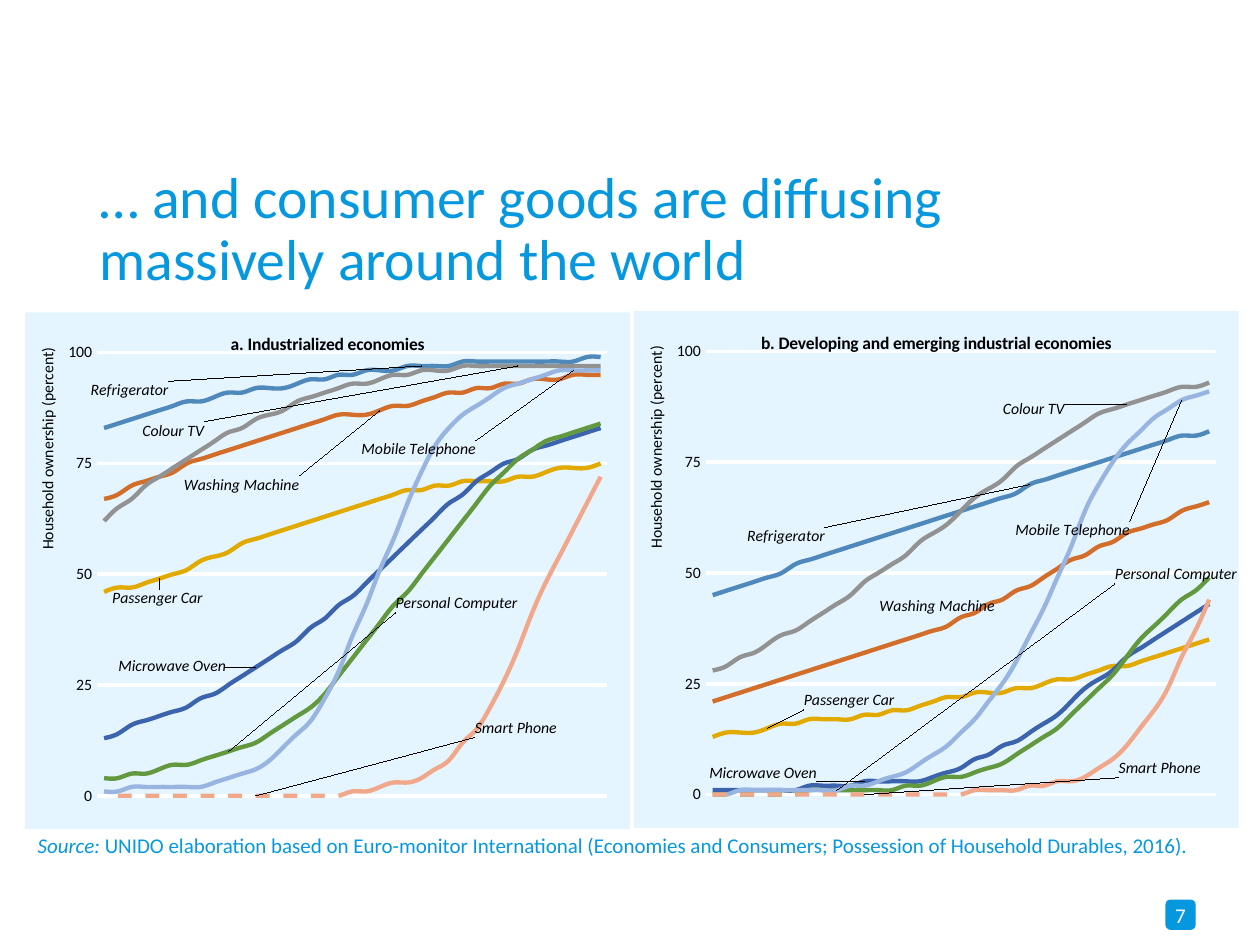
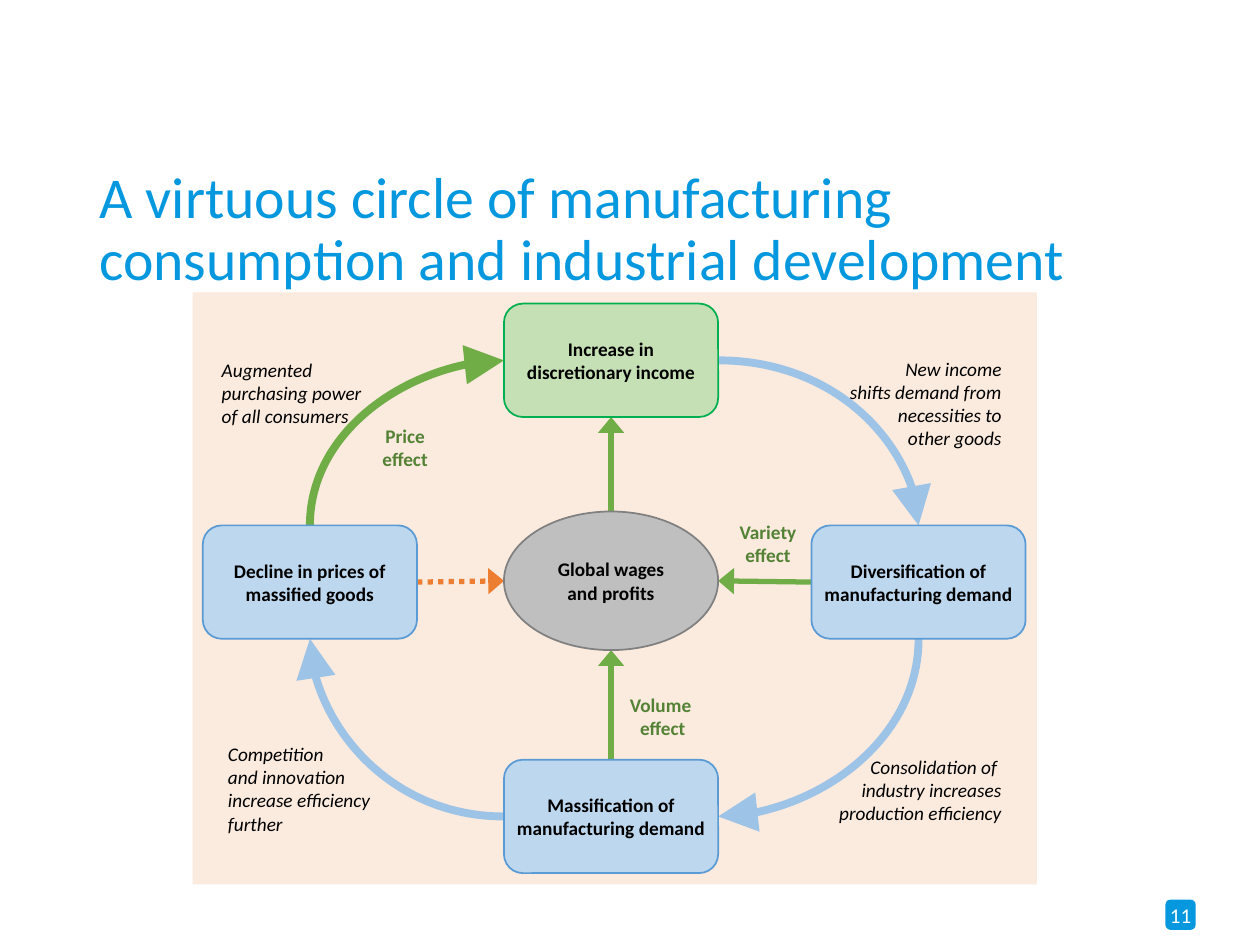
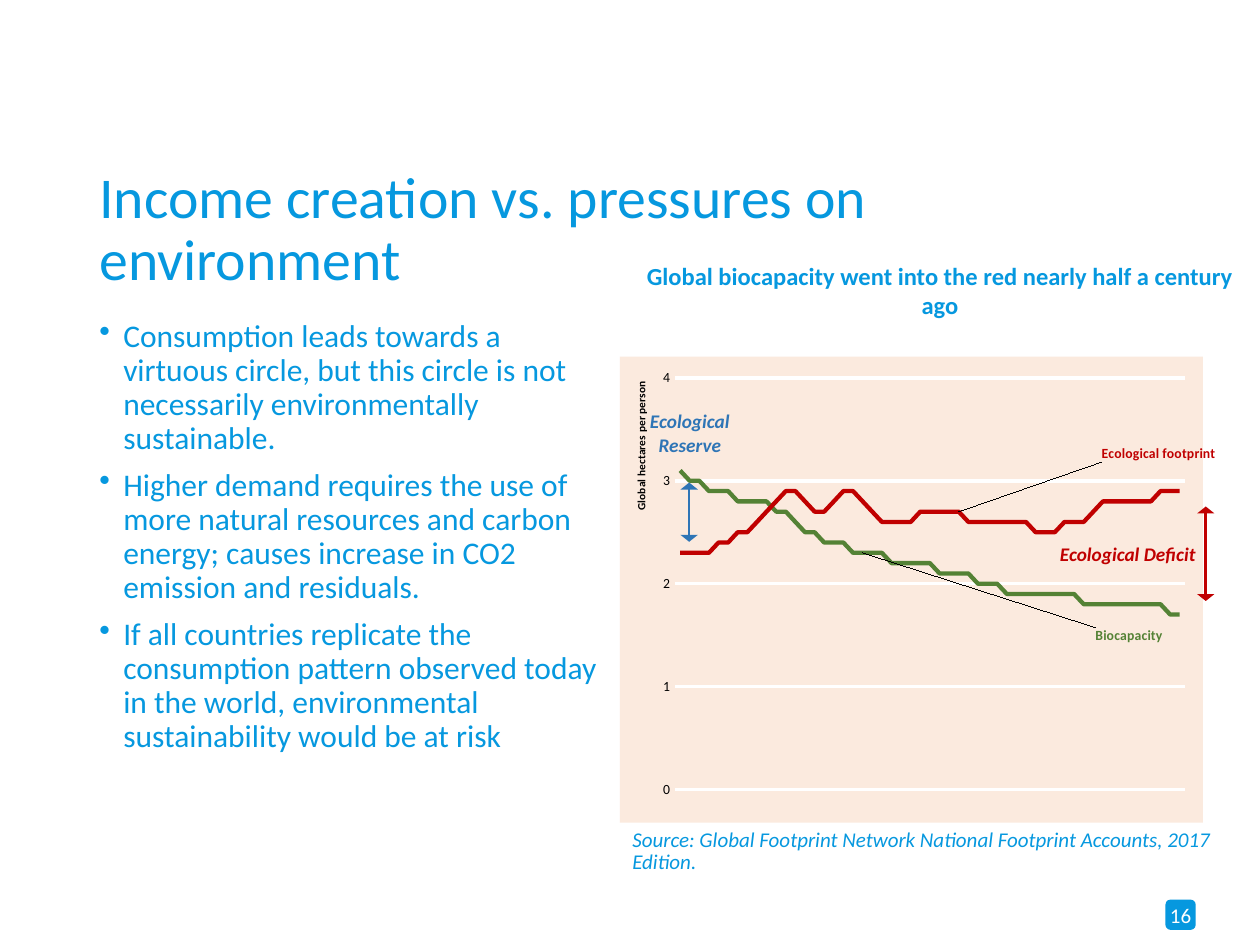
import pptx
import pptx.util
import pptx.chart.data
import pptx.dml.color
import pptx.enum.chart
import pptx.enum.dml
import pptx.enum.shapes
import pptx.enum.text
import pptx.oxml
import pptx.oxml.ns

Inches, Pt = pptx.util.Inches, pptx.util.Pt
RGB = pptx.dml.color.RGBColor.from_string
SHAPE = pptx.enum.shapes.MSO_SHAPE
LINK = pptx.enum.shapes.MSO_CONNECTOR
MIDDLE = pptx.enum.text.MSO_ANCHOR.MIDDLE
ALIGN = pptx.enum.text.PP_ALIGN
LEFT, MID, RIGHT = ALIGN.LEFT, ALIGN.CENTER, ALIGN.RIGHT
TICK = pptx.enum.chart.XL_TICK_MARK
qn = pptx.oxml.ns.qn

# Shared colours and font
FONT = "Calibri"
CYAN, WHITE, BLACK = RGB("0698DF"), RGB("FFFFFF"), RGB("000000")
LEAF, FOREST, MINT = RGB("70AD47"), RGB("548235"), RGB("C5E0B4")
JADE, RUST = RGB("00B050"), RGB("ED7D31")
SKY, PALE, BLUE = RGB("9DC3E6"), RGB("BDD7EE"), RGB("5B9BD5")
GREY, SLATE = RGB("BFBFBF"), RGB("808080")
NAVY, RED = RGB("2E75B6"), RGB("C00000")
ICE, PEACH = RGB("CCECFF"), RGB("FBE5D6")

# Goods: name, line colour, labelled point
GOODS = [
    ("Refrigerator", RGB("4F88BB"), 23),
    ("Washing Machine", RGB("D26E2A"), 20),
    ("Colour TV", RGB("929292"), 30),
    ("Passenger Car", RGB("E2AA00"), 4),
    ("Microwave Oven", RGB("3B64AD"), 11),
    ("Personal Computer", RGB("62993E"), 9),
    ("Mobile Telephone", RGB("97B5E0"), 34),
    ("Smart Phone", RGB("F1A78A"), 11),
]
# Share of households at every fourth year from 1980
RICH = [
    [83, 87, 90, 92, 94, 96, 97, 98, 98, 99],
    [67, 72, 77, 81, 85, 87, 90, 92, 94, 95],
    [62, 72, 80, 86, 91, 94, 96, 97, 97, 97],
    [46, 49, 54, 59, 63, 67, 70, 71, 73, 75],
    [13, 18, 23, 31, 40, 51, 63, 73, 79, 83],
    [4, 6, 9, 14, 23, 39, 54, 70, 80, 84],
    [1, 2, 3, 8, 22, 51, 79, 90, 95, 96],
    [0] * 5 + [2, 6, 20, 48, 72],
]
POOR = [
    [45, 49, 54, 58, 62, 66, 71, 75, 79, 82],
    [21, 25, 29, 33, 37, 43, 49, 56, 61, 66],
    [28, 34, 41, 50, 59, 69, 78, 86, 90, 93],
    [13, 15, 17, 18, 21, 23, 25, 28, 31, 35],
    [1, 1, 2, 3, 4, 9, 16, 26, 35, 43],
    [0, 0, 1, 1, 3, 6, 13, 24, 38, 49],
    [0, 1, 1, 3, 9, 21, 42, 70, 85, 91],
    [0] * 5 + [1, 2, 6, 19, 44],
]
# Left edge and middle of each label, in inches on the slide
RICHTAGS = [(0.74, 3.1), (1.48, 3.85), (1.15, 3.42), (0.91, 4.75),
            (0.96, 5.29), (3.16, 4.79), (2.89, 3.57), (3.79, 5.78)]
POORTAGS = [(5.95, 4.26), (7, 4.81), (7.98, 3.25), (6.4, 5.56),
            (5.65, 6.14), (8.87, 4.56), (8.08, 4.21), (8.9, 6.1)]

# Hectares per person at every fourth and every second year from 1961
STOCK = [3.1, 2.9, 2.8, 2.6, 2.4, 2.3, 2.2, 2.1, 2, 1.9, 1.9, 1.8, 1.8, 1.7]
USE = ([2.3, 2.3, 2.4, 2.5, 2.6, 2.8, 2.9, 2.7, 2.8, 2.9, 2.7, 2.6, 2.6, 2.7, 2.7]
       + [2.6] * 4 + [2.5, 2.6, 2.6, 2.8, 2.8, 2.8, 2.9, 2.9])


def fill(knots, gap, digits=None):
    """Yearly values on a smooth curve through the knots."""
    ends = [2 * knots[0] - knots[1], *knots, 2 * knots[-1] - knots[-2]]
    vals = []
    for a, b, c, d in zip(ends, ends[1:], ends[2:], ends[3:]):
        for k in range(gap):
            t = k / gap
            y = b + t / 2 * (c - a + t * (2 * a - 5 * b + 4 * c - d + t * (3 * (b - c) + d - a)))
            vals.append(max(0, round(y, digits)))
    return vals + [knots[-1]]


def lines(table, tags):
    return [(*good, fill(knots, 4), spot) for good, knots, spot in zip(GOODS, table, tags)]


# Charts: box, title, first year, axis, plot share, look, lines
OWNED = dict(start=1980, top=100, step=25, axis="Household ownership (percent)",
             plot=(0.119, 0.078, 0.844, 0.858), spot=(0.015, 0.062), ground=ICE, alpha=50,
             size=9, named=dict(size=Pt(9), bold=False), smooth=True,
             tagfont=dict(size=Pt(9), italic=True))
CHARTS = [
    dict(OWNED, box=(0.2, 2.48, 4.8, 4.1), title="a. Industrialized economies",
         rows=lines(RICH, RICHTAGS)),
    dict(OWNED, box=(5.03, 2.47, 4.8, 4.1),
         title="b. Developing and emerging industrial economies",
         rows=lines(POOR, POORTAGS)),
]
GLOBE = dict(box=(4.92, 2.83, 4.73, 3.7), title=None, start=1961, top=4, step=1,
             axis="Global hectares per person", plot=(0.095, 0.046, 0.874, 0.883),
             spot=(0.018, 0.042), ground=PEACH, alpha=80, size=8,
             named=dict(size=Pt(6.5), bold=True), smooth=False,
             tagfont=dict(size=Pt(8), bold=True),
             rows=[("Biocapacity", FOREST, 19, fill(STOCK, 4, 1), (8.8, 5.05)),
                   ("Ecological footprint", RED, 29, fill(USE, 2, 1), (8.85, 3.6))])

# Circle of effects
CARD = (1.7, 0.9)
ROUND = SHAPE.ROUNDED_RECTANGLE
NODES = [
    (SHAPE.OVAL, (4, 4.06, 1.7, 1.1), "Global wages\nand profits", GREY, SLATE),
    (ROUND, (6.44, 4.17, *CARD), "Diversification of manufacturing demand", PALE, BLUE),
    (ROUND, (4, 6.03, *CARD), "Massification of manufacturing demand", PALE, BLUE),
    (ROUND, (1.61, 4.17, *CARD), "Decline in prices of massified goods", PALE, BLUE),
    (ROUND, (4, 2.41, *CARD), "Increase in\ndiscretionary income", MINT, JADE),
]
ARROWS = [
    ((6.44, 4.62), (5.7, 4.61), LEAF, None),
    ((4.85, 6.03), (4.85, 5.16), LEAF, None),
    ((4.85, 4.06), (4.85, 3.31), LEAF, None),
    ((3.31, 4.62), (4, 4.61), RUST, pptx.enum.dml.MSO_LINE.ROUND_DOT),
]
ARCS = [
    ((5.7, 2.86), (7.29, 4.17), SKY),
    ((7.29, 5.07), (5.7, 6.48), SKY),
    ((4, 6.48), (2.46, 5.07), SKY),
    ((2.46, 4.17), (4, 2.86), LEAF),
]
NOTES = [
    ((6.52, 2.81, 1.43, 0.78), RIGHT,
     "New income\n shifts demand from necessities to\nother goods"),
    ((6.35, 5.89, 1.6, 0.76), RIGHT,
     "Consolidation of \nindustry increases production efficiency"),
    ((1.81, 5.88, 1.6, 0.76), LEFT,
     "Competition\nand innovation \nincrease efficiency\nfurther"),
    ((1.76, 2.73, 1.38, 0.78), LEFT, "Augmented purchasing power\nof all consumers"),
]
EFFECTS = [
    ((5.7, 4.01, 0.79, 0.6), "Variety effect"),
    ((4.9, 5.4, 0.72, 0.57), "Volume \neffect"),
    ((2.89, 3.36, 0.65, 0.38), "Price effect"),
]
POINTS = [
    "Consumption leads towards a virtuous circle, but this circle is not necessarily "
    "environmentally sustainable.",
    "Higher demand requires the use of more natural resources and carbon energy; causes "
    "increase in CO2 emission and residuals.",
    "If all countries replicate the consumption pattern observed today in the world, "
    "environmental sustainability would be at risk",
]
SOURCE = ("Source: ", "UNIDO elaboration based on Euro-monitor International (Economies and "
          "Consumers; Possession of Household Durables, 2016).")


# Drawing helpers
def style(part, **vals):
    for key, val in vals.items():
        setattr(part, key, val)


def paint(font, color=BLACK, **vals):
    style(font, name=FONT, **vals)
    font.color.rgb = color


def stroke(line, color, width):
    line.color.rgb = color
    line.width = Pt(width)


def xml(name, parent=None, **vals):
    node = pptx.oxml.parse_xml(f"<{name} {pptx.oxml.ns.nsdecls('a', 'c')}/>")
    for key, val in vals.items():
        node.set(key, str(val))
    if parent is not None:
        parent.append(node)
    return node


def fade(solid, alpha):
    xml("a:alpha", solid[0], val=alpha * 1000)


def tighten(frame):
    style(frame, margin_left=0, margin_top=0, margin_right=0, margin_bottom=0,
          vertical_anchor=MIDDLE)


def write(slide, box, texts, size, color, align=LEFT, tight=False, space=None, bullet=False,
          **vals):
    frame = slide.shapes.add_textbox(*map(Inches, box)).text_frame
    frame.word_wrap = True
    if tight:
        tighten(frame)
    for k, text in enumerate(texts):
        para = frame.paragraphs[0] if k == 0 else frame.add_paragraph()
        para.text = text
        if bullet:
            props = para._p.get_or_add_pPr()
            props.set("marL", str(Inches(0.19)))
            props.set("indent", str(-Inches(0.19)))
            xml("a:buChar", props, char="•")
            if k:
                para.space_before = Pt(7.5)
        style(para, alignment=align, line_spacing=space)
        for run in para.runs:
            paint(run.font, color, size=Pt(size), **vals)
    return frame


def block(slide, kind, box, color, edge=None):
    shape = slide.shapes.add_shape(kind, *map(Inches, box))
    shape.shadow.inherit = False
    shape.fill.solid()
    shape.fill.fore_color.rgb = color
    if edge is None:
        shape.line.fill.background()
    else:
        stroke(shape.line, edge, 1)
    return shape


def label(shape, text, wrap=True, **vals):
    frame = shape.text_frame
    tighten(frame)
    frame.word_wrap = wrap
    para = frame.paragraphs[0]
    para.text = text
    para.alignment = MID
    for run in para.runs:
        paint(run.font, **vals)


def arrow(slide, start, end, color, width, dash=None, both=False, long="med", kind=LINK.STRAIGHT):
    link = slide.shapes.add_connector(kind, *map(Inches, start + end))
    stroke(link.line, color, width)
    if dash:
        link.line.dash_style = dash
    edge = link._element.spPr.find(qn("a:ln"))
    for tip in ("a:headEnd", "a:tailEnd") if both else ("a:tailEnd",):
        xml(tip, edge, type="triangle", w="lg", len=long)
    xml("a:effectLst", link._element.spPr)
    return link


def arc(slide, start, end, color):
    """Quarter curve, turned so that it leaves and arrives square to the cards."""
    link = arrow(slide, start, end, color, 4.5, long="lg", kind=LINK.CURVE)
    wide, tall = end[0] - start[0], end[1] - start[1]
    turn = [(True, True), (False, True), (False, False), (True, False)].index((wide > 0, tall > 0))
    mid = (start[0] + wide / 2, start[1] + tall / 2)
    size = (abs(wide), abs(tall))
    if turn % 2:
        size = size[::-1]
    props = link._element.spPr
    frame = props.find(qn("a:xfrm"))
    for flip in ("flipH", "flipV"):
        frame.attrib.pop(flip, None)
    frame.set("rot", str(turn * 5400000))
    props.find(qn("a:prstGeom")).set("prst", "curvedConnector2")
    style(link, left=Inches(mid[0] - size[0] / 2), top=Inches(mid[1] - size[1] / 2),
          width=Inches(size[0]), height=Inches(size[1]))


# Chart parts
def layout(inner=False, edge=False, **vals):
    node = xml("c:layout")
    hand = xml("c:manualLayout", node)
    if inner:
        xml("c:layoutTarget", hand, val="inner")
    if inner or edge:
        for axis in "xy":
            xml(f"c:{axis}Mode", hand, val="edge")
    for key, val in vals.items():
        xml("c:" + key, hand, val=round(val, 4))
    return node


def tag(line, row, plan):
    name, color, at, vals, goal = row
    mark = line.points[at].data_label
    paint(mark.font, color if plan["tagfont"].get("bold") else BLACK, **plan["tagfont"])
    mark.position = pptx.enum.chart.XL_LABEL_POSITION.RIGHT
    line.data_labels.show_value = False
    group = line._element.find(qn("c:dLbls"))
    node = group.find(qn("c:dLbl"))
    node.find(qn("c:showVal")).set("val", "0")
    node.find(qn("c:showSerName")).set("val", "1")
    # Shift from the point to the wanted place
    left, top, wide, tall = plan["box"]
    x, y, w, h = plan["plot"]
    px = x + w * (at + 0.5) / len(vals)
    py = y + h * (1 - vals[at] / plan["top"])
    shift = layout(x=(goal[0] - 0.06 - left) / wide - px, y=(goal[1] - top) / tall - py)
    node.find(qn("c:idx")).addnext(shift)
    group.append(pptx.oxml.parse_xml(
        f'<c:extLst {pptx.oxml.ns.nsdecls("c")}>'
        '<c:ext uri="{CE6537A1-D6FC-4f65-9D91-7224C49458BB}" '
        'xmlns:c15="http://schemas.microsoft.com/office/drawing/2012/chart">'
        '<c15:showLeaderLines val="1"/></c:ext></c:extLst>'))


def graph(slide, plan):
    data = pptx.chart.data.CategoryChartData()
    rows = plan["rows"]
    data.categories = [str(plan["start"] + k) for k in range(len(rows[0][3]))]
    for row in rows:
        data.add_series(row[0], row[3])
    chart = slide.shapes.add_chart(pptx.enum.chart.XL_CHART_TYPE.LINE,
                                   *map(Inches, plan["box"]), data).chart
    paint(chart.font, size=Pt(plan["size"]))
    style(chart, has_legend=False, has_title=bool(plan["title"]))
    if plan["title"]:
        frame = chart.chart_title.text_frame
        frame.text = plan["title"]
        paint(frame.paragraphs[0].runs[0].font, size=Pt(10), bold=True)

    # Ground and plot area
    ground = xml("c:spPr")
    solid = xml("a:solidFill", ground)
    xml("a:srgbClr", solid, val=plan["ground"])
    fade(solid, plan["alpha"])
    xml("a:noFill", xml("a:ln", ground))
    space = chart._chartSpace
    space.find(qn("c:txPr")).addprevious(ground)
    area = space.find(qn("c:chart")).find(qn("c:plotArea"))
    for old in area.findall(qn("c:layout")):
        area.remove(old)
    area.insert(0, layout(True, **dict(zip("xywh", plan["plot"]))))

    # Axes
    base, side = chart.category_axis, chart.value_axis
    style(base, major_tick_mark=TICK.NONE, has_major_gridlines=False,
          tick_label_position=pptx.enum.chart.XL_TICK_LABEL_POSITION.NONE)
    stroke(base.format.line, WHITE, 2)
    style(side, minimum_scale=0, maximum_scale=plan["top"], major_unit=plan["step"],
          major_tick_mark=TICK.NONE, has_major_gridlines=True, has_title=True)
    style(side.tick_labels, number_format="#,##0", number_format_is_linked=False)
    side.format.line.fill.background()
    stroke(side.major_gridlines.format.line, WHITE, 2)
    name = side.axis_title
    name.text_frame.text = plan["axis"]
    body = name.text_frame._txBody.bodyPr
    body.set("rot", "-5400000")
    body.set("vert", "horz")
    paint(name.text_frame.paragraphs[0].runs[0].font, **plan["named"])
    node = name._element
    for old in node.findall(qn("c:layout")):
        node.remove(old)
    node.find(qn("c:tx")).addnext(layout(edge=True, **dict(zip("xy", plan["spot"]))))

    # Lines and their labels
    chart.plots[0].vary_by_categories = False
    for line, row in zip(chart.plots[0].series, rows):
        line.smooth = plan["smooth"]
        line.marker.style = pptx.enum.chart.XL_MARKER_STYLE.NONE
        stroke(line.format.line, row[1], 2.5)
        tag(line, row, plan)


# Shared page parts
def page(deck, number):
    slide = deck.slides.add_slide(deck.slide_layouts[6])
    badge = block(slide, ROUND, (9.25, 7.14, 0.24, 0.24), CYAN)
    label(badge, number, wrap=False, color=WHITE, size=Pt(12))
    return slide


def head(slide, title):
    frame = write(slide, (0.69, 1.23, 8.64, 1.2), [title], 33, CYAN, space=0.9)
    frame.vertical_anchor = MIDDLE


def main():
    deck = pptx.Presentation()
    style(deck, slide_width=Inches(10), slide_height=Inches(7.5))

    # Spread of consumer goods
    slide = page(deck, "7")
    head(slide, "… and consumer goods are diffusing massively around the world")
    note = write(slide, (0.2, 6.58, 9.67, 0.31), SOURCE[:1], 12, CYAN, space=0.9, italic=True)
    run = note.paragraphs[0].add_run()
    run.text = SOURCE[1]
    paint(run.font, CYAN, size=Pt(12), italic=False)
    for plan in CHARTS:
        graph(slide, plan)

    # Virtuous circle
    slide = page(deck, "11")
    panel = block(slide, SHAPE.RECTANGLE, (1.53, 2.32, 6.7, 4.7), PEACH)
    fade(panel._element.spPr.find(qn("a:solidFill")), 80)
    head(slide, "A virtuous circle of manufacturing consumption and industrial development")
    for start, end, color, dash in ARROWS:
        arrow(slide, start, end, color, 3, dash)
    for start, end, color in ARCS:
        arc(slide, start, end, color)
    for kind, box, text, color, edge in NODES:
        label(block(slide, kind, box, color, edge), text, size=Pt(11), bold=True)
    for box, align, text in NOTES:
        write(slide, box, [text], 11, BLACK, align, tight=True, italic=True)
    for box, text in EFFECTS:
        write(slide, box, [text], 11, FOREST, MID, tight=True, bold=True)

    # Pressure on the environment
    slide = page(deck, "16")
    graph(slide, GLOBE)
    head(slide, "Income creation vs. pressures on environment")
    write(slide, (0.69, 2.49, 4.23, 4.49), POINTS, 18, CYAN, space=0.9, bullet=True)
    write(slide, (4.95, 2.02, 5.02, 0.57),
          ["Global biocapacity went into the red nearly half a century ago"], 14, CYAN, MID, bold=True)
    write(slide, (4.92, 6.53, 4.99, 0.45),
          ["Source: Global Footprint Network National Footprint Accounts, 2017 Edition."],
          12, CYAN, space=0.9, italic=True)
    for box, text, color, align in [
            ((5.15, 3.2, 0.65, 0.47), "Ecological Reserve", NAVY, MID),
            ((8.15, 4.02, 1.34, 0.75), "Ecological Deficit", RED, RIGHT)]:
        write(slide, box, [text], 11, color, align, tight=True, bold=True, italic=True)
    for x, top, end, color in [(5.47, 3.83, 4.3, NAVY), (9.57, 4.02, 4.77, RED)]:
        arrow(slide, (x, top), (x, end), color, 1.5, both=True, long="sm")

    deck.save("out.pptx")


if __name__ == "__main__":
    main()
